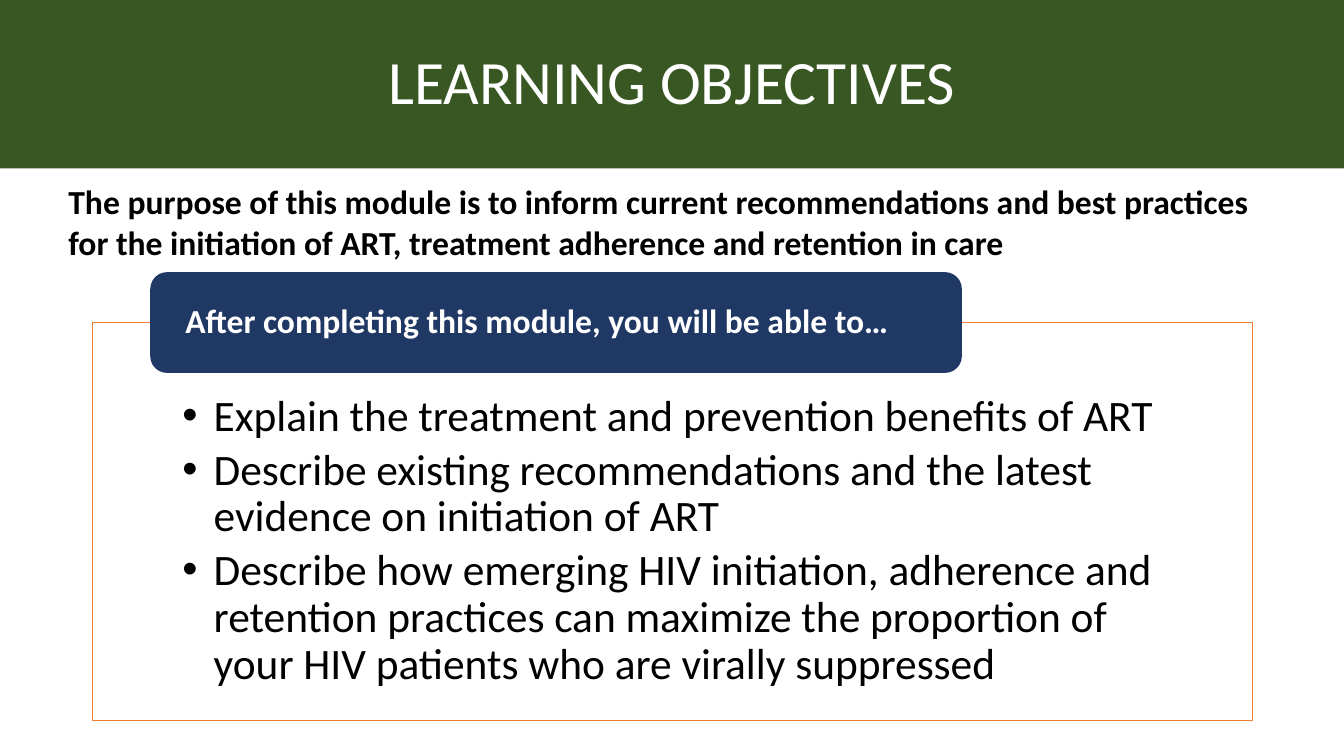
"""Builds the learning objectives slide of an ART training module."""
from lxml.etree import SubElement
from pptx import Presentation
from pptx.dml.color import RGBColor
from pptx.enum.shapes import MSO_SHAPE as SHAPE
from pptx.enum.text import MSO_ANCHOR as ANCHOR, PP_ALIGN as ALIGN
from pptx.oxml.ns import qn
from pptx.util import Emu, Pt

COLORS = {"green": "385723", "navy": "203864", "orange": "ED7D31",
          "white": "FFFFFF", "black": "000000"}
FONT = "Calibri"
SLIDE = (1333, 750)

TITLE = "LEARNING OBJECTIVES"
PURPOSE = ("The purpose of this module is to inform current recommendations and best "
           "practices for the initiation of ART, treatment adherence and retention in care")
LEAD_IN = "After completing this module, you will be able to…"
OBJECTIVES = [
    "Explain the treatment and prevention benefits of ART",
    "Describe existing recommendations and the latest evidence on initiation of ART",
    "Describe how emerging HIV initiation, adherence and retention practices can "
    "maximize the proportion of your HIV patients who are virally suppressed",
]
BULLET_INDENT = 31


def px(length):
    return Emu(length * 9144)


def rgb(name):
    return RGBColor.from_string(COLORS[name])


def add_block(preset, box, fill, line=None):
    block = slide.shapes.add_shape(preset, *map(px, box))
    block.shadow.inherit = False
    block.fill.solid()
    block.fill.fore_color.rgb = rgb(fill)
    if line:
        block.line.color.rgb = rgb(line)
        block.line.width = Pt(0.5)
    else:
        block.line.fill.background()
    return block


def write(block, texts, size, color, bold=False, anchor=ANCHOR.TOP,
          margins=(10, 5, 10, 5), **paragraph_format):
    frame = block.text_frame
    frame.word_wrap = True
    frame.vertical_anchor = anchor
    for side, margin in zip(("left", "top", "right", "bottom"), margins):
        setattr(frame, f"margin_{side}", px(margin))
    for number, text in enumerate(texts):
        paragraph = frame.add_paragraph() if number else frame.paragraphs[0]
        run = paragraph.add_run()
        run.text = text
        for key, value in {"alignment": ALIGN.LEFT, **paragraph_format}.items():
            setattr(paragraph, key, value)
        for key, value in {"name": FONT, "size": Pt(size), "bold": bold}.items():
            setattr(run.font, key, value)
        run.font.color.rgb = rgb(color)


def add_bullets(block):
    for paragraph in block.text_frame.paragraphs:
        properties = paragraph._p.get_or_add_pPr()
        properties.set("marL", str(px(BULLET_INDENT)))
        properties.set("indent", str(-px(BULLET_INDENT)))
        SubElement(properties, qn("a:buFont"), typeface="Arial")
        SubElement(properties, qn("a:buChar"), char="•")


deck = Presentation()
deck.slide_width, deck.slide_height = map(px, SLIDE)
slide = deck.slides.add_slide(deck.slide_layouts[6])

banner = add_block(SHAPE.RECTANGLE, (0, 0, SLIDE[0], 167), "green")
write(banner, [TITLE], 44, "white", anchor=ANCHOR.MIDDLE,
      alignment=ALIGN.CENTER, line_spacing=0.9)

objectives = add_block(SHAPE.RECTANGLE, (92, 320, 1150, 395), "white", "orange")
panel_color = objectives.fill._xPr.find(qn("a:solidFill"))[0]
SubElement(panel_color, qn("a:alpha"), val="90000")
write(objectives, OBJECTIVES, 31, "black", margins=(89, 71, 89, 24),
      line_spacing=0.9, space_after=Pt(4.65))
add_bullets(objectives)

lead_in = add_block(SHAPE.ROUNDED_RECTANGLE, (149, 270, 805, 100), "navy")
write(lead_in, [LEAD_IN], 24, "white", True, ANCHOR.MIDDLE, (30, 0, 30, 0),
      line_spacing=0.9)

purpose = slide.shapes.add_textbox(*map(px, (58, 175, 1237, 91)))
write(purpose, [PURPOSE], 24, "black", True)

deck.save("out.pptx")
